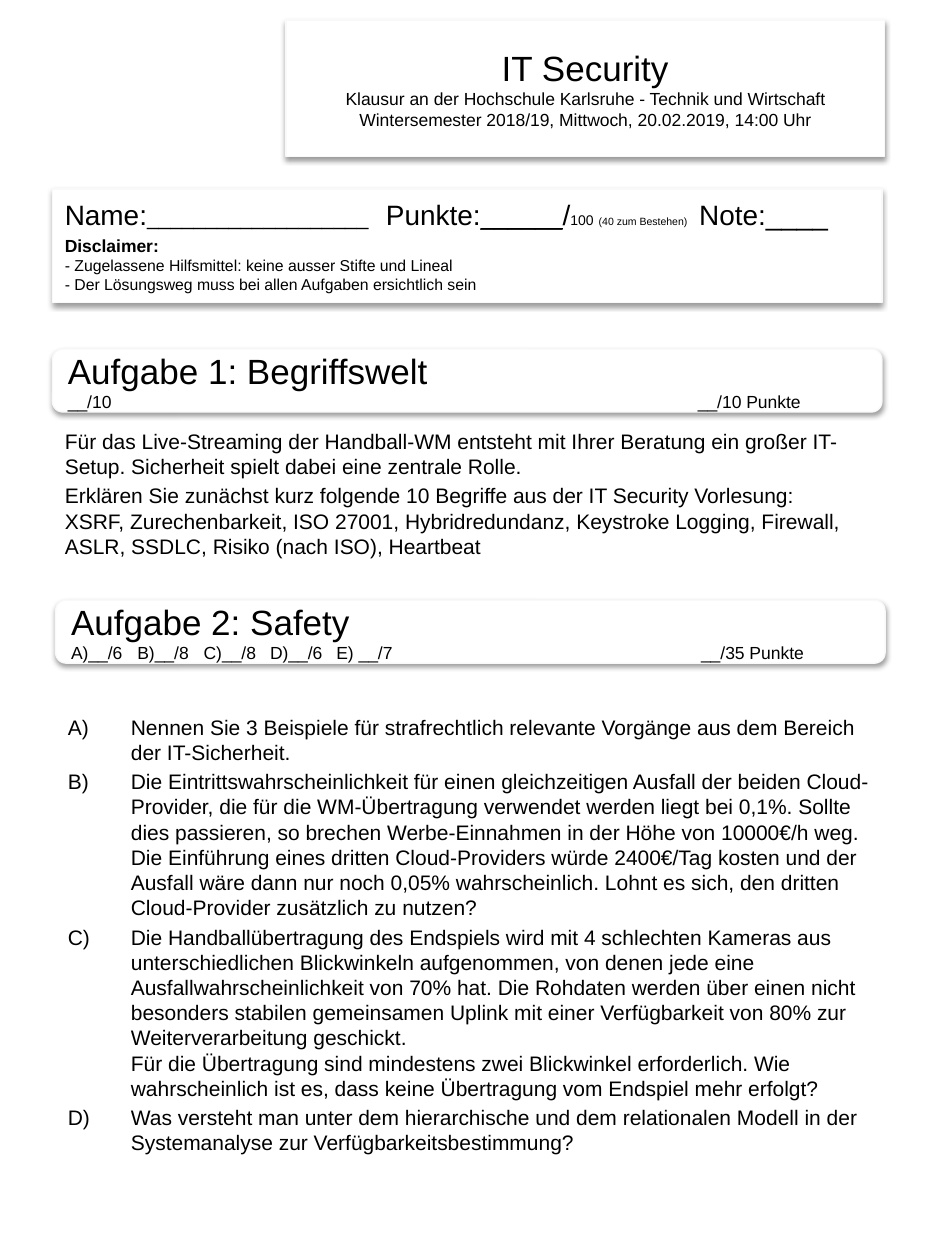
from copy import deepcopy
from dataclasses import dataclass

from lxml.etree import SubElement
from pptx import Presentation
from pptx.dml.color import RGBColor
from pptx.enum.shapes import MSO_SHAPE
from pptx.enum.text import MSO_ANCHOR, PP_ALIGN
from pptx.oxml.ns import qn
from pptx.util import Pt

COLORS = {"text": "000000", "panel": "FFFFFF", "border": "F9F9F9", "shadow": "000000"}
FONT = "Arial"
BODY_SIZE = 12
POINTS_TAB = 360
PART_TAB = 37.9


@dataclass(frozen=True)
class Box:
    left: float
    top: float
    width: float
    height: float


@dataclass(frozen=True)
class Span:
    text: str
    size: float
    bold: bool = False
    underline: bool = False


@dataclass(frozen=True)
class Line:
    spans: tuple[Span, ...]
    space_before: float = 0
    tabs: tuple[float, ...] = ()
    lettered: bool = False


@dataclass(frozen=True)
class Task:
    box: Box
    title: str
    score: str
    tabs: tuple[float, ...]


def color(key: str) -> RGBColor:
    return RGBColor.from_string(COLORS[key])


def add_shadow(shape) -> None:
    shape.shadow.inherit = False
    effects = shape._element.spPr.find(qn("a:effectLst"))
    outer = SubElement(effects, qn("a:outerShdw"), blurRad=str(Pt(3.1)), dist=str(Pt(1.6)),
                       dir="5400000", rotWithShape="0")
    tint = SubElement(outer, qn("a:srgbClr"), val=COLORS["shadow"])
    SubElement(tint, qn("a:alpha"), val="38000")


def format_run(run, span: Span) -> None:
    run.font.name = FONT
    run.font.size = Pt(span.size)
    run.font.bold = span.bold
    run.font.underline = span.underline
    run.font.color.rgb = color("text")


def fill_paragraph(paragraph, line: Line, align: PP_ALIGN) -> None:
    """Write one line; a vertical tab in a span becomes a line break of the same size."""
    paragraph.alignment = align
    paragraph.space_before = Pt(line.space_before)
    properties = paragraph._p.get_or_add_pPr()
    if line.lettered:
        properties.set("marL", str(Pt(36)))
        properties.set("indent", str(Pt(-36)))
        SubElement(properties, qn("a:buFont"), typeface=FONT)
        SubElement(properties, qn("a:buAutoNum"), type="alphaUcParenR")
    if line.tabs:
        stops = SubElement(properties, qn("a:tabLst"))
        for position in line.tabs:
            SubElement(stops, qn("a:tab"), pos=str(Pt(position)), algn="l")
    for span in line.spans:
        for index, part in enumerate(span.text.split("\v")):
            if index:
                paragraph.add_line_break()
            run = paragraph.add_run()
            run.text = part
            format_run(run, span)
            if index:
                run._r.getprevious().append(deepcopy(run._r.rPr))


def write(shape, lines: list[Line], anchor: MSO_ANCHOR, align: PP_ALIGN = PP_ALIGN.LEFT) -> None:
    frame = shape.text_frame
    frame.word_wrap = True
    frame.vertical_anchor = anchor
    for index, line in enumerate(lines):
        paragraph = frame.add_paragraph() if index else frame.paragraphs[0]
        fill_paragraph(paragraph, line, align)


def add_panel(slide, kind: MSO_SHAPE, box: Box):
    panel = slide.shapes.add_shape(kind, Pt(box.left), Pt(box.top), Pt(box.width), Pt(box.height))
    panel.fill.solid()
    panel.fill.fore_color.rgb = color("panel")
    panel.line.color.rgb = color("border")
    panel.line.width = Pt(0.75)
    add_shadow(panel)
    return panel


def add_body(slide, box: Box, texts: list[str], lettered: bool = False) -> None:
    body = slide.shapes.add_textbox(Pt(box.left), Pt(box.top), Pt(box.width), Pt(box.height))
    lines = [Line((Span(text, BODY_SIZE),), 2.4 if index else 0, lettered=lettered)
             for index, text in enumerate(texts)]
    write(body, lines, MSO_ANCHOR.TOP)


def add_task(slide, task: Task) -> None:
    heading = add_panel(slide, MSO_SHAPE.ROUNDED_RECTANGLE, task.box)
    write(heading, [Line((Span(task.title, 20),)),
                    Line((Span(task.score, 10),), tabs=task.tabs)], MSO_ANCHOR.MIDDLE)


EXAM_LINES = [
    Line((Span("IT Security", 20),)),
    Line((Span("Klausur an der Hochschule Karlsruhe - Technik und Wirtschaft", 10),)),
    Line((Span("Wintersemester 2018/19, Mittwoch, 20.02.2019, 14:00 Uhr", 10),)),
]
CANDIDATE_LINES = [
    Line((Span("Name:", 16), Span("___________________\t", 12), Span("Punkte:", 16),
          Span("______", 14, underline=True), Span("/", 16), Span("100", 8), Span(" ", 10),
          Span("(40 zum Bestehen)\t", 6), Span("Note:____", 16)), tabs=(183.5, 362.5)),
    Line((Span("Disclaimer:", 10, bold=True),), 2),
    Line((Span("- Zugelassene Hilfsmittel: keine ausser Stifte und Lineal", 9),)),
    Line((Span("- Der Lösungsweg muss bei allen Aufgaben ersichtlich sein", 9),)),
]
TASKS = [
    Task(Box(30, 199.5, 474, 36), "Aufgabe 1: Begriffswelt", "__/10\t__/10 Punkte",
         (POINTS_TAB,)),
    Task(Box(31.8, 343, 474, 36), "Aufgabe 2: Safety",
         "A)__/6\tB)__/8\tC)__/8\tD)__/6\tE) __/7\t__/35 Punkte",
         tuple(PART_TAB * step for step in range(1, 5)) + (POINTS_TAB,)),
]
TERMS_TEXTS = [
    "Für das Live-Streaming der Handball-WM entsteht mit Ihrer Beratung ein großer IT-Setup. "
    "Sicherheit spielt dabei eine zentrale Rolle.",
    "Erklären Sie zunächst kurz folgende 10 Begriffe aus der IT Security Vorlesung:\v"
    "XSRF, Zurechenbarkeit, ISO 27001, Hybridredundanz, Keystroke Logging, Firewall, "
    "ASLR, SSDLC, Risiko (nach ISO), Heartbeat",
]
SAFETY_TEXTS = [
    "Nennen Sie 3 Beispiele für strafrechtlich relevante Vorgänge aus dem Bereich "
    "der IT-Sicherheit.",
    "Die Eintrittswahrscheinlichkeit für einen gleichzeitigen Ausfall der beiden Cloud-Provider, "
    "die für die WM-Übertragung verwendet werden liegt bei 0,1%. Sollte dies passieren, so "
    "brechen Werbe-Einnahmen in der Höhe von 10000€/h weg. Die Einführung eines dritten "
    "Cloud-Providers würde 2400€/Tag kosten und der Ausfall wäre dann nur noch 0,05% "
    "wahrscheinlich. Lohnt es sich, den dritten Cloud-Provider zusätzlich zu nutzen?",
    "Die Handballübertragung des Endspiels wird mit 4 schlechten Kameras aus "
    "unterschiedlichen Blickwinkeln aufgenommen, von denen jede eine "
    "Ausfallwahrscheinlichkeit von 70% hat. Die Rohdaten werden über einen nicht besonders "
    "stabilen gemeinsamen Uplink mit einer Verfügbarkeit von 80% zur Weiterverarbeitung "
    "geschickt.\vFür die Übertragung sind mindestens zwei Blickwinkel erforderlich. Wie "
    "wahrscheinlich ist es, dass keine Übertragung vom Endspiel mehr erfolgt?",
    "Was versteht man unter dem hierarchische und dem relationalen Modell in der "
    "Systemanalyse zur Verfügbarkeitsbestimmung?",
]


def main() -> None:
    presentation = Presentation()
    presentation.slide_width, presentation.slide_height = Pt(540), Pt(720)
    slide = presentation.slides.add_slide(presentation.slide_layouts[6])

    exam = add_panel(slide, MSO_SHAPE.RECTANGLE, Box(163.4, 11.5, 342, 78))
    write(exam, EXAM_LINES, MSO_ANCHOR.MIDDLE, PP_ALIGN.CENTER)
    candidate = add_panel(slide, MSO_SHAPE.RECTANGLE, Box(30, 108, 474, 65))
    candidate.text_frame.margin_top = Pt(5)
    write(candidate, CANDIDATE_LINES, MSO_ANCHOR.TOP)

    for task in TASKS:
        add_task(slide, task)
    add_body(slide, Box(30, 241.2, 474, 100), TERMS_TEXTS)
    add_body(slide, Box(31.7, 404.5, 480, 281), SAFETY_TEXTS, lettered=True)
    presentation.save("out.pptx")


if __name__ == "__main__":
    main()
